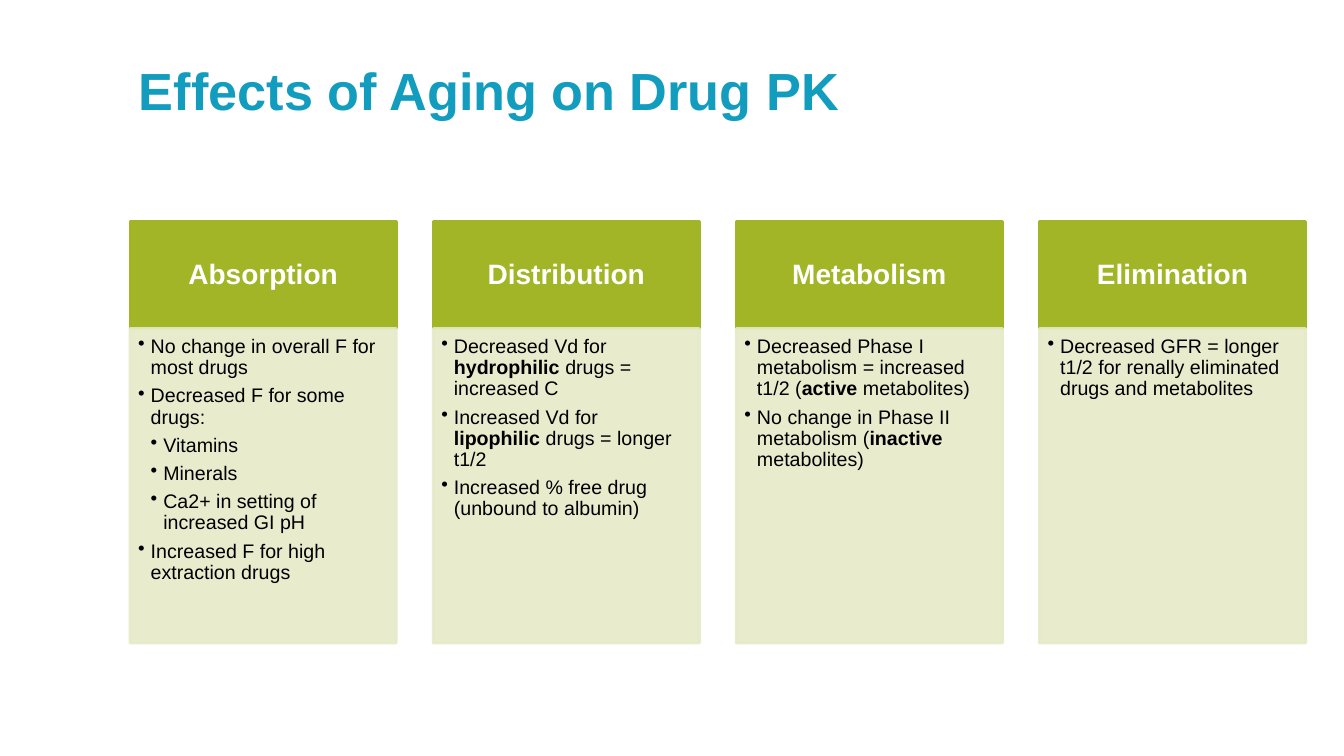
from lxml import etree
from pptx import Presentation, util as u
from pptx.dml.color import RGBColor
from pptx.enum import shapes, text
from pptx.oxml import ns

WIDE, HIGH = 13.33, 7.5
LEFT, RIGHT, CARD = 1.29, 12.95, 2.64
ROWS = {"head": (2.2, 1.06), "body": (3.26, 3.12)}
INDENT = 0.125

GREEN = RGBColor(0xA2, 0xB5, 0x26)
PALE = RGBColor(0xE6, 0xEA, 0xC8)
TEAL = RGBColor(0x12, 0x9D, 0xBF)
WHITE = RGBColor(255, 255, 255)
BLACK = RGBColor(0, 0, 0)

STAGES = [
    ("Absorption", [
        (1, "No change in overall F for most drugs"),
        (1, "Decreased F for some drugs:"),
        (2, "Vitamins"),
        (2, "Minerals"),
        (2, "Ca2+ in setting of increased GI pH"),
        (1, "Increased F for high extraction drugs"),
    ]),
    ("Distribution", [
        (1, "Decreased Vd for *hydrophilic* drugs = increased C"),
        (1, "Increased Vd for *lipophilic* drugs = longer t1/2"),
        (1, "Increased % free drug (unbound to albumin)"),
    ]),
    ("Metabolism", [
        (1, "Decreased Phase I metabolism = increased t1/2 (*active* metabolites)"),
        (1, "No change in Phase II metabolism (*inactive* metabolites)"),
    ]),
    ("Elimination", [
        (1, "Decreased GFR = longer t1/2 for renally eliminated drugs and metabolites"),
    ]),
]


class Board:
    face = "Arial"

    def __init__(self, deck, cols):
        self.slide = deck.slides.add_slide(deck.slide_layouts[6])
        self.step = (RIGHT - LEFT - CARD) / (cols - 1)

    def frame(self, shape, insets, anchor):
        frame = shape.text_frame
        frame.word_wrap = True
        frame.vertical_anchor = anchor
        sides = ("left", "top", "right", "bottom")
        for side, inset in zip(sides, insets):
            setattr(frame, f"margin_{side}", u.Inches(inset))
        return frame

    def style(self, para, size, color, align=text.PP_ALIGN.LEFT):
        para.alignment = align
        para.line_spacing = 0.9
        font = para.font
        font.name, font.size = self.face, u.Pt(size)
        font.color.rgb = color

    def title(self, words):
        box = self.slide.shapes.add_textbox(
            u.Inches(1.28), u.Inches(0.26), u.Inches(11.8), u.Inches(1.34))
        frame = self.frame(box, (0.1, 0, 0.1, 0), text.MSO_ANCHOR.MIDDLE)
        para = frame.paragraphs[0]
        para.text = words
        self.style(para, 37.3, TEAL)
        para.font.bold = True

    def cell(self, col, row, color):
        top, tall = ROWS[row]
        shape = self.slide.shapes.add_shape(
            shapes.MSO_SHAPE.RECTANGLE, u.Inches(LEFT + col * self.step),
            u.Inches(top), u.Inches(CARD), u.Inches(tall))
        shape.shadow.inherit = False
        shape.fill.solid()
        shape.fill.fore_color.rgb = color
        shape.line.color.rgb = color
        shape.line.width = u.Pt(2)
        return shape

    def fade(self, shape, share):
        for tone in shape._element.spPr.iter(ns.qn("a:srgbClr")):
            etree.SubElement(tone, ns.qn("a:alpha"), val=str(share * 1000))

    def head(self, col, words):
        shape = self.cell(col, "head", GREEN)
        frame = self.frame(shape, (0.16, 0.09, 0.16, 0.09), text.MSO_ANCHOR.MIDDLE)
        para = frame.paragraphs[0]
        para.text = words
        self.style(para, 20, WHITE, text.PP_ALIGN.CENTER)
        para.font.bold = True

    def body(self, col, points):
        shape = self.cell(col, "body", PALE)
        self.fade(shape, 90)
        frame = self.frame(shape, (0.08, 0.08, 0.11, 0.12), text.MSO_ANCHOR.TOP)
        for spot, (level, words) in enumerate(points):
            para = frame.add_paragraph() if spot else frame.paragraphs[0]
            self.point(para, level, words)

    def point(self, para, level, words):
        para.level = level
        para.space_after = u.Pt(5)
        props = para._p.get_or_add_pPr()
        props.set("marL", str(u.Inches(level * INDENT)))
        props.set("indent", str(-u.Inches(INDENT)))
        etree.SubElement(props, ns.qn("a:buChar"), char="•")
        self.style(para, 14, BLACK)
        for spot, part in enumerate(words.split("*")):
            run = para.add_run()
            run.text = part
            if spot % 2:
                run.font.bold = True


def main():
    deck = Presentation()
    deck.slide_width, deck.slide_height = u.Inches(WIDE), u.Inches(HIGH)
    board = Board(deck, len(STAGES))
    for col, (name, points) in enumerate(STAGES):
        board.head(col, name)
        board.body(col, points)
    board.title("Effects of Aging on Drug PK")
    deck.save("out.pptx")


if __name__ == "__main__":
    main()
